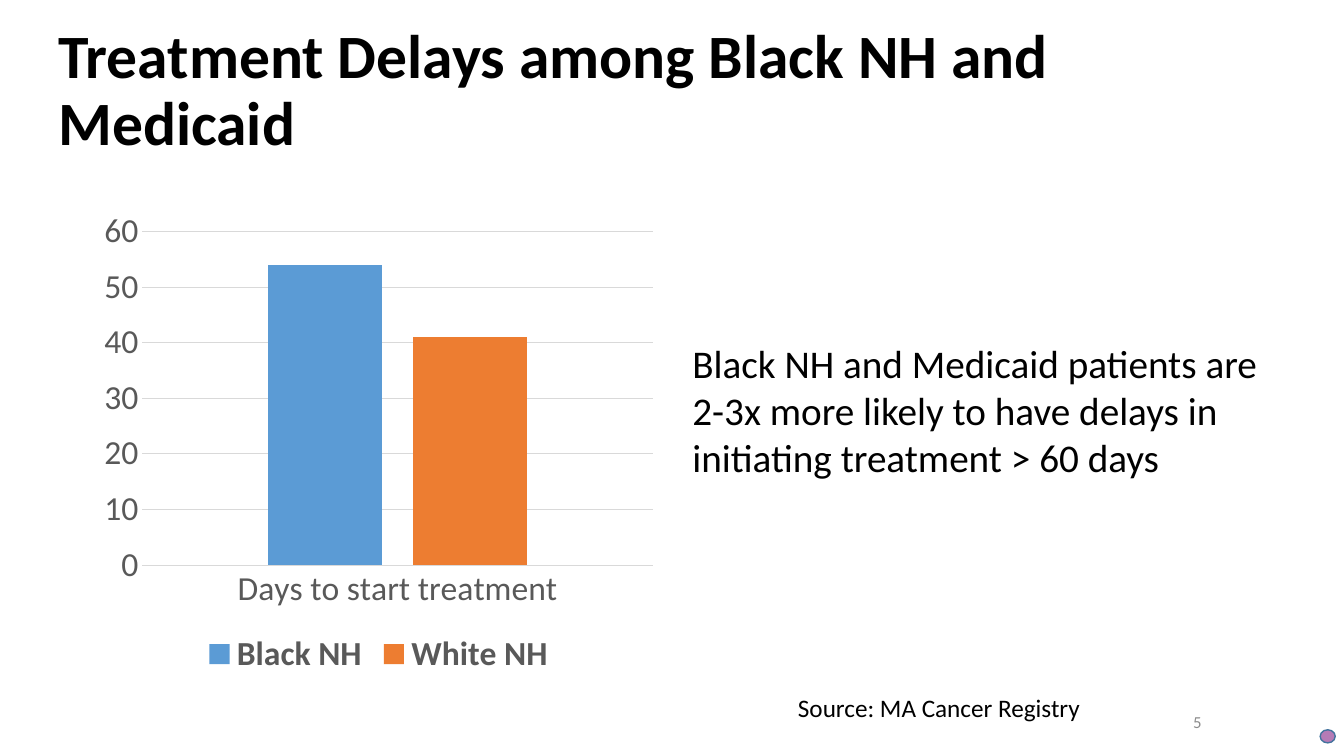
from dataclasses import dataclass

from pptx import Presentation
from pptx.chart.data import CategoryChartData
from pptx.dml.color import RGBColor
from pptx.enum.chart import XL_CHART_TYPE, XL_LEGEND_POSITION, XL_TICK_MARK
from pptx.enum.shapes import MSO_SHAPE
from pptx.enum.text import MSO_ANCHOR, PP_ALIGN
from pptx.util import Cm, Pt


@dataclass(frozen=True)
class Theme:
    font: str = "Calibri"
    black: str = "000000"
    axis_text: str = "595959"
    grid: str = "D9D9D9"
    number: str = "8C8C8C"
    black_nh: str = "5B9BD5"
    white_nh: str = "ED7D31"
    dot: str = "B57BB6"
    dot_line: str = "43739E"
    title_size: int = 44
    body_size: int = 28
    chart_size: int = 24
    source_size: int = 18
    number_size: int = 12


THEME = Theme()


def style_font(font, size, color, bold=False):
    font.name = THEME.font
    font.size = Pt(size)
    font.bold = bold
    font.color.rgb = RGBColor.from_string(color)


def style_line(line, color, width):
    line.color.rgb = RGBColor.from_string(color)
    line.width = Pt(width)


def add_text(slide, box, text, size, color=THEME.black, bold=False,
             anchor=MSO_ANCHOR.TOP, align=PP_ALIGN.LEFT, spacing=None):
    """Add a one-paragraph text box; box is left, top, width, height in cm."""
    frame = slide.shapes.add_textbox(*map(Cm, box)).text_frame
    frame.word_wrap = True
    frame.vertical_anchor = anchor
    paragraph = frame.paragraphs[0]
    paragraph.alignment = align
    paragraph.line_spacing = spacing
    run = paragraph.add_run()
    run.text = text
    style_font(run.font, size, color, bold)


def add_delay_chart(slide, box):
    data = CategoryChartData()
    data.categories = ["Days to start treatment"]
    data.add_series("Black NH", [54])
    data.add_series("White NH", [41])
    chart = slide.shapes.add_chart(
        XL_CHART_TYPE.COLUMN_CLUSTERED, *map(Cm, box), data).chart
    chart.has_title = False
    style_font(chart.font, THEME.chart_size, THEME.axis_text)

    chart.has_legend = True
    chart.legend.position = XL_LEGEND_POSITION.BOTTOM
    chart.legend.include_in_layout = False
    style_font(chart.legend.font, THEME.chart_size, THEME.axis_text, bold=True)

    for axis in (chart.category_axis, chart.value_axis):
        axis.major_tick_mark = axis.minor_tick_mark = XL_TICK_MARK.NONE
        style_font(axis.tick_labels.font, THEME.chart_size, THEME.axis_text)
    style_line(chart.category_axis.format.line, THEME.grid, 0.75)
    values = chart.value_axis
    values.minimum_scale, values.maximum_scale, values.major_unit = 0, 60, 10
    values.format.line.fill.background()
    style_line(values.major_gridlines.format.line, THEME.grid, 0.75)

    plot = chart.plots[0]
    plot.gap_width = 219
    plot.overlap = -27
    plot.vary_by_categories = False
    for series, color in zip(plot.series, (THEME.black_nh, THEME.white_nh)):
        series.format.fill.solid()
        series.format.fill.fore_color.rgb = RGBColor.from_string(color)


def add_dot(slide, box):
    dot = slide.shapes.add_shape(MSO_SHAPE.FLOWCHART_CONNECTOR, *map(Cm, box))
    dot.shadow.inherit = False
    dot.fill.solid()
    dot.fill.fore_color.rgb = RGBColor.from_string(THEME.dot)
    style_line(dot.line, THEME.dot_line, 1)


def main():
    presentation = Presentation()
    presentation.slide_width = Cm(33.87)
    presentation.slide_height = Cm(19.05)
    slide = presentation.slides.add_slide(presentation.slide_layouts[6])

    add_delay_chart(slide, (2.34, 5.08, 14.4, 12.09))
    add_text(slide, (23.93, 17.7, 6.6, 0.97), "5", THEME.number_size,
             THEME.number, anchor=MSO_ANCHOR.MIDDLE, align=PP_ALIGN.RIGHT)
    add_text(slide, (1.22, 0.48, 30.99, 3.68),
             "Treatment Delays among Black NH and Medicaid",
             THEME.title_size, bold=True, anchor=MSO_ANCHOR.MIDDLE, spacing=0.9)
    add_text(slide, (17.2, 8.43, 15.01, 3.84),
             "Black NH and Medicaid patients are 2-3x more likely to have "
             "delays in initiating treatment > 60 days", THEME.body_size)
    add_dot(slide, (33.27, 18.39, 0.38, 0.33))
    add_text(slide, (19.86, 17.32, 8.84, 1.02),
             "Source: MA Cancer Registry", THEME.source_size)

    presentation.save("out.pptx")


if __name__ == "__main__":
    main()
